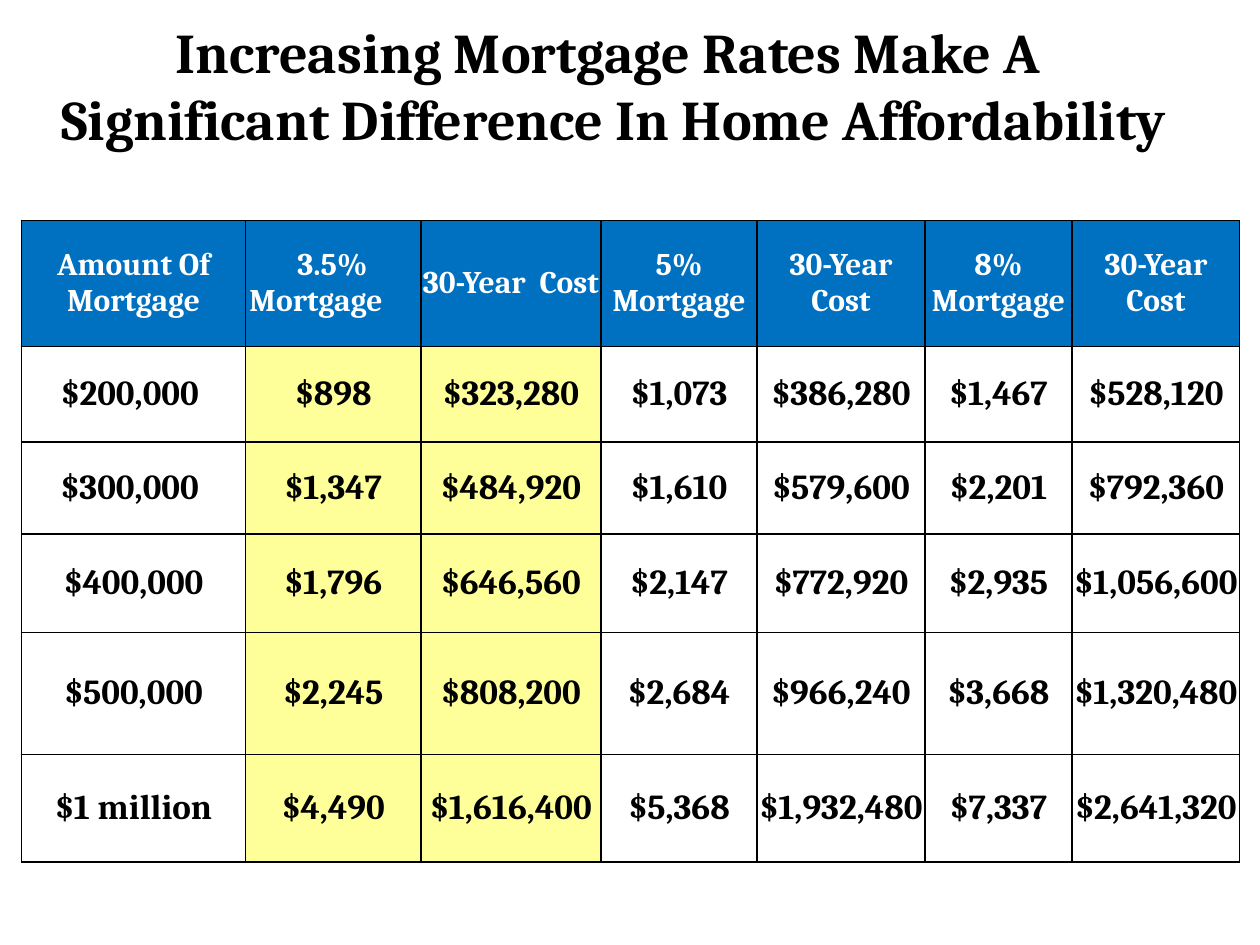
from lxml.etree import SubElement
from pptx import Presentation
from pptx.dml.color import RGBColor
from pptx.enum.text import MSO_ANCHOR, PP_ALIGN
from pptx.oxml.ns import qn
from pptx.util import Pt

PX = 9144  # EMU per px, 100 px to the inch

BLACK, WHITE, BLUE, YELLOW = "000000", "FFFFFF", "0070C0", "FFFF99"

COLUMNS = [178, 139, 143, 124, 133, 117, 133]
ROWS = [100, 76, 73, 78, 97, 85]
HIGHLIGHTED = (1, 2)
COSTS = [
    ["Amount Of Mortgage", "3.5% Mortgage", "30-Year  Cost", "5% Mortgage",
     "30-Year Cost", "8% Mortgage", "30-Year Cost"],
    ["$200,000 ", "$898", "$323,280", "$1,073", "$386,280", "$1,467", "$528,120"],
    ["$300,000 ", "$1,347", "$484,920", "$1,610", "$579,600", "$2,201", "$792,360"],
    ["$400,000", "$1,796", "$646,560", "$2,147", "$772,920", "$2,935", "$1,056,600"],
    ["$500,000", "$2,245", "$808,200", "$2,684", "$966,240", "$3,668", "$1,320,480"],
    ["$1 million", "$4,490", "$1,616,400", "$5,368", "$1,932,480", "$7,337", "$2,641,320"],
]


def px(n):
    return int(n * PX)


def rgb(color):
    return RGBColor.from_string(color)


class Deck:
    font = "Cambria"

    def __init__(self, width, height):
        self.prs = Presentation()
        self.prs.slide_width, self.prs.slide_height = px(width), px(height)
        self.slide = self.prs.slides.add_slide(self.prs.slide_layouts[5])

    def run(self, p, text, size, color):
        r = p.add_run()
        r.text = text
        r.font.name, r.font.size, r.font.bold = self.font, Pt(size), True
        r.font.color.rgb = rgb(color)

    def title(self, lines, x, y, w, h, size):
        sp = self.slide.shapes.title
        sp.left, sp.top, sp.width, sp.height = map(px, (x, y, w, h))
        tf = sp.text_frame
        tf.word_wrap = True
        tf.vertical_anchor = MSO_ANCHOR.TOP
        p = tf.paragraphs[0]
        p.alignment = PP_ALIGN.CENTER
        for i, line in enumerate(lines):
            if i:
                p.add_line_break()
            self.run(p, line, size, BLACK)

    def table(self, x, y, columns, rows):
        frame = self.slide.shapes.add_table(
            len(rows), len(columns), px(x), px(y), px(sum(columns)), px(sum(rows)))
        table = frame.table
        for column, width in zip(table.columns, columns):
            column.width = px(width)
        for row, height in zip(table.rows, rows):
            row.height = px(height)
        return table

    def cell(self, cell, text, size, color, fill):
        cell.margin_left = cell.margin_right = cell.margin_top = cell.margin_bottom = 0
        cell.vertical_anchor = MSO_ANCHOR.MIDDLE
        self.borders(cell)
        cell.fill.solid()
        cell.fill.fore_color.rgb = rgb(fill)
        p = cell.text_frame.paragraphs[0]
        p.alignment = PP_ALIGN.CENTER
        self.run(p, text, size, color)

    def borders(self, cell):
        tc_pr = cell._tc.get_or_add_tcPr()
        for side in ("a:lnL", "a:lnR", "a:lnT", "a:lnB"):
            line = SubElement(tc_pr, qn(side), w=str(Pt(1)))
            fill = SubElement(line, qn("a:solidFill"))
            SubElement(fill, qn("a:srgbClr"), val=BLACK)

    def indent(self, cell, left, first):
        """Left-align a cell, with its first line set further in by `first`."""
        p = cell.text_frame.paragraphs[0]
        p.alignment = PP_ALIGN.LEFT
        p_pr = p._p.get_or_add_pPr()
        p_pr.set("marL", str(px(left)))
        p_pr.set("indent", str(px(first)))


def main():
    deck = Deck(1000, 750)
    table = deck.table(17, 175, COLUMNS, ROWS)
    for i, row in enumerate(COSTS):
        for j, text in enumerate(row):
            if i == 0:
                deck.cell(table.cell(i, j), text, 18, WHITE, BLUE)
            else:
                fill = YELLOW if j in HIGHLIGHTED else WHITE
                deck.cell(table.cell(i, j), text, 20, BLACK, fill)
    deck.indent(table.cell(0, 1), 3, 38)
    deck.title(["Increasing Mortgage Rates Make A ",
                "Significant Difference In Home Affordability"], 25, 9, 925, 118, 32)
    deck.prs.save("out.pptx")


if __name__ == "__main__":
    main()
